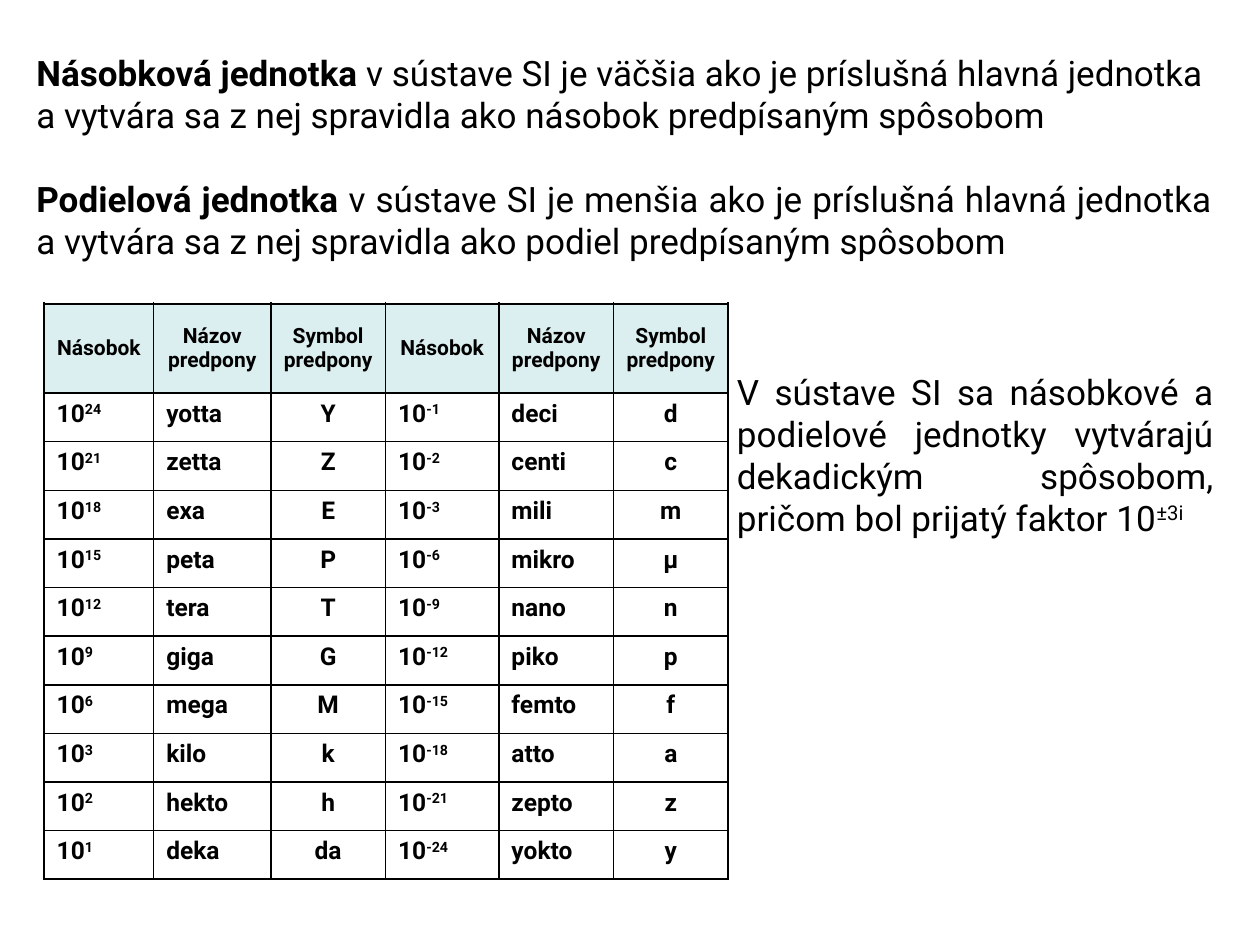
"""Slide on SI multiple and submultiple units with a table of prefixes."""
from lxml import etree
from pptx import Presentation
from pptx.dml.color import RGBColor
from pptx.enum.text import MSO_ANCHOR, MSO_AUTO_SIZE, PP_ALIGN
from pptx.oxml.ns import qn
from pptx.util import Inches, Pt

CENTER, JUSTIFY, LEFT = PP_ALIGN.CENTER, PP_ALIGN.JUSTIFY, PP_ALIGN.LEFT
MIDDLE = MSO_ANCHOR.MIDDLE
GROW = MSO_AUTO_SIZE.SHAPE_TO_FIT_TEXT
COLORS = {"ink": "000000", "header": "BBE0E3"}
FONT = "Roboto"
THIN, THICK = 1, 1.5


def write(para, text, lead="", power="", size=20, bold=False, align=JUSTIFY, before=0):
    para.alignment = align
    para.space_before = Pt(before)
    for words, heavy, raised in ((lead, True, False), (text, bold, False), (power, bold, True)):
        if not words:
            continue
        span = para.add_run()
        span.text = words
        span.font.name = FONT
        span.font.size = Pt(size)
        span.font.bold = heavy
        span.font.color.rgb = RGBColor.from_string(COLORS["ink"])
        if raised:
            span.font._element.set("baseline", "30000")


def draw_borders(cell, **widths):
    properties = cell._tc.get_or_add_tcPr()
    for side in "LRTB":
        line = etree.SubElement(properties, qn(f"a:ln{side}"), w=str(Pt(widths[side])))
        fill = etree.SubElement(line, qn("a:solidFill"))
        etree.SubElement(fill, qn("a:srgbClr"), val=COLORS["ink"])


deck = Presentation()
deck.slide_width, deck.slide_height = Inches(10), Inches(7.5)
page = deck.slides.add_slide(deck.slide_layouts[6])

headings = ["Násobok", "Názov predpony", "Symbol predpony"] * 2
prefixes = [
    ("24", "yotta", "Y", "-1", "deci", "d"),
    ("21", "zetta", "Z", "-2", "centi", "c"),
    ("18", "exa", "E", "-3", "mili", "m"),
    ("15", "peta", "P", "-6", "mikro", "µ"),
    ("12", "tera", "T", "-9", "nano", "n"),
    ("9", "giga", "G", "-12", "piko", "p"),
    ("6", "mega", "M", "-15", "femto", "f"),
    ("3", "kilo", "k", "-18", "atto", "a"),
    ("2", "hekto", "h", "-21", "zepto", "z"),
    ("1", "deka", "da", "-24", "yokto", "y"),
]
rows = [headings] + prefixes
column_widths = [0.87, 0.93, 0.91, 0.9, 0.91, 0.91]
header_height, table_height = 0.71, 4.57
row_height = (table_height - header_height) / len(prefixes)
last_row, last_column = len(prefixes), len(headings) - 1

table = page.shapes.add_table(
    len(rows), len(headings), Inches(0.35), Inches(2.41),
    Inches(sum(column_widths)), Inches(table_height)).table
table.first_row = table.horz_banding = False
for column, width in zip(table.columns, column_widths):
    column.width = Inches(width)

for row_index, row in enumerate(rows):
    is_header = row_index == 0
    table.rows[row_index].height = Inches(header_height if is_header else row_height)
    for column_index, text in enumerate(row):
        cell = table.cell(row_index, column_index)
        para = cell.text_frame.paragraphs[0]
        draw_borders(
            cell,
            L=THICK if is_header and column_index == 0 else THIN,
            R=THICK if column_index == last_column else THIN,
            T=THICK if row_index <= 1 else THIN,
            B=THICK if row_index in (0, last_row) else THIN)
        if is_header:
            cell.margin_left = cell.margin_right = cell.margin_top = cell.margin_bottom = 0
            cell.vertical_anchor = MIDDLE
            cell.fill.solid()
            cell.fill.fore_color.rgb = RGBColor.from_string(COLORS["header"])
            tint = cell._tc.tcPr.find(qn("a:solidFill")).find(qn("a:srgbClr"))
            etree.SubElement(tint, qn("a:alpha"), val="50000")
            write(para, text, size=12, bold=True, align=CENTER)
        else:
            cell.fill.background()
            kind = column_index % 3
            if kind == 0:
                write(para, "10", power=text, size=14, bold=True)
            else:
                write(para, text, size=14, bold=True, align=CENTER if kind == 2 else JUSTIFY)

definitions = [
    dict(lead="Násobková jednotka", align=LEFT,
         text=" v sústave SI je väčšia ako je príslušná hlavná jednotka "
              "a vytvára sa z nej spravidla ako násobok predpísaným spôsobom"),
    dict(lead="Podielová jednotka", before=24,
         text=" v sústave SI je menšia ako je príslušná hlavná jednotka "
              "a vytvára sa z nej spravidla ako podiel predpísaným spôsobom"),
]
factor_note = [
    dict(text="V sústave SI sa násobkové a podielové jednotky vytvárajú "
              "dekadickým spôsobom, pričom bol prijatý faktor 10", power="±3i"),
]
for place, paragraphs in (((0.19, 0.36, 9.53, 1.77), definitions),
                          ((5.75, 2.89, 3.98, 1.43), factor_note)):
    box = page.shapes.add_textbox(*map(Inches, place))
    frame = box.text_frame
    frame.word_wrap = True
    frame.auto_size = GROW
    for index, content in enumerate(paragraphs):
        write(frame.add_paragraph() if index else frame.paragraphs[0], **content)

deck.save("out.pptx")
